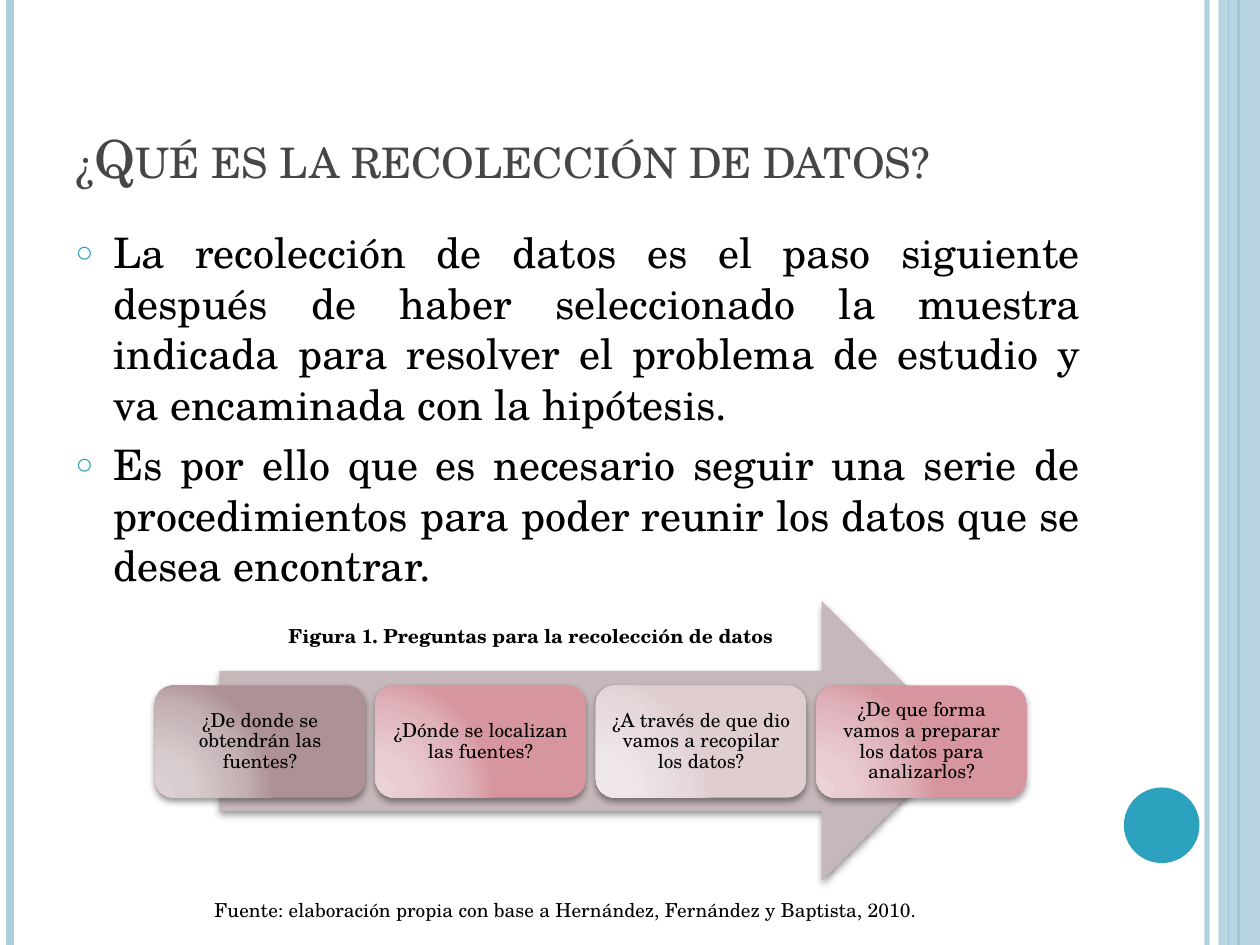
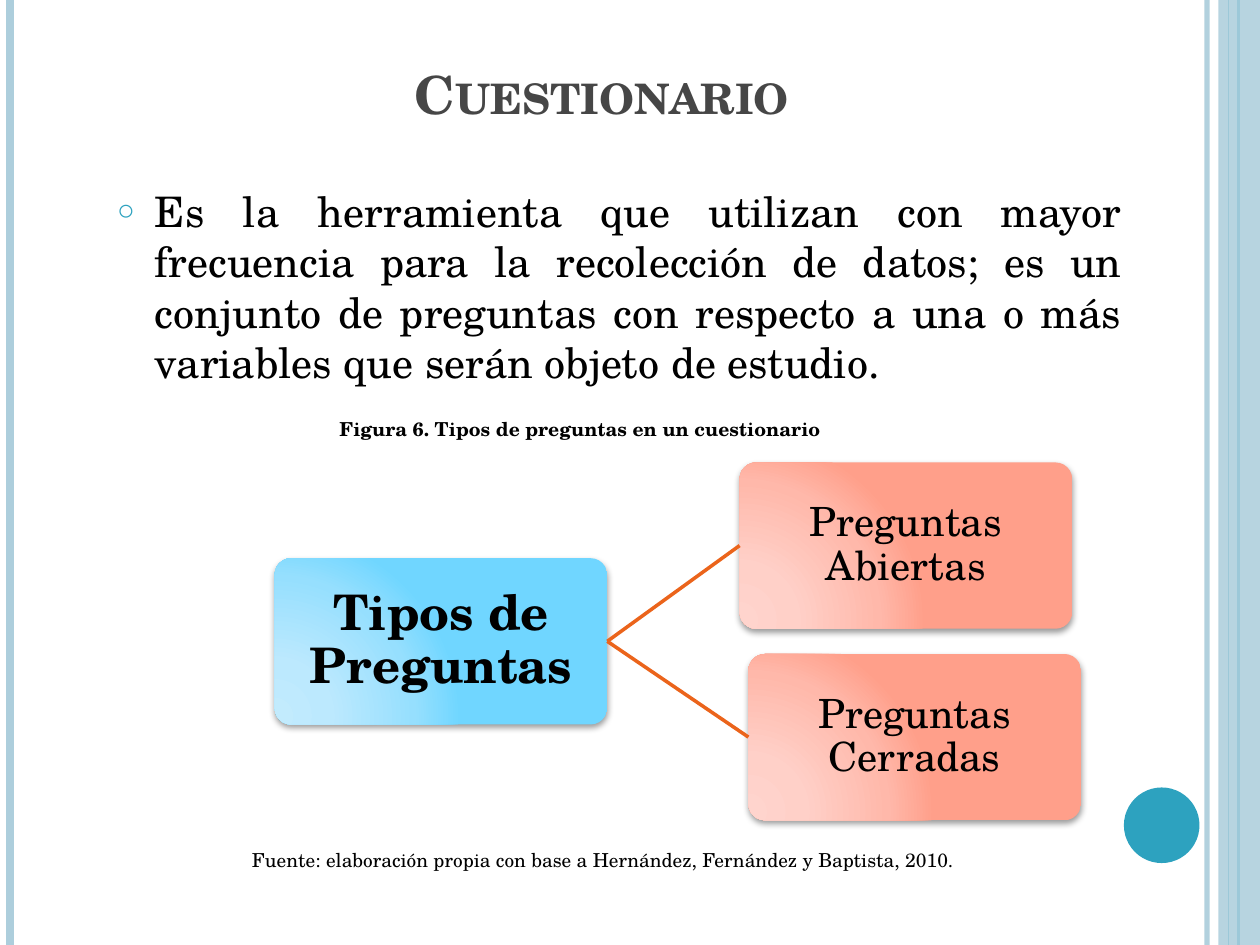
from dataclasses import dataclass

from lxml import etree
from pptx import Presentation
from pptx.dml.color import RGBColor
from pptx.enum.shapes import MSO_CONNECTOR, MSO_SHAPE
from pptx.enum.text import MSO_ANCHOR, MSO_AUTO_SIZE, PP_ALIGN
from pptx.oxml.ns import qn
from pptx.util import Pt

PX = 9144  # 100 px to the inch
WIDTH, HEIGHT = 1000, 750
FONT = "TeX Gyre Schola"
BLACK, GRAY, TEAL, PALE, ORANGE = "000000", "464646", "2DA2BF", "ADCEDC", "EB641B"
LEFT, CENTER, JUSTIFY = PP_ALIGN.LEFT, PP_ALIGN.CENTER, PP_ALIGN.JUSTIFY
TOP, MIDDLE, BOTTOM = MSO_ANCHOR.TOP, MSO_ANCHOR.MIDDLE, MSO_ANCHOR.BOTTOM
RECTANGLE, ELLIPSE = MSO_SHAPE.RECTANGLE, MSO_SHAPE.OVAL
ROUNDED, ARROW = MSO_SHAPE.ROUNDED_RECTANGLE, MSO_SHAPE.RIGHT_ARROW
STRAIGHT = MSO_CONNECTOR.STRAIGHT
LEFT_SIDE, RIGHT_SIDE = 1, 3
STOPS = (0, 30, 75, 100)
MAUVE = ("DBD1D3", "D8CDCE", "C3B0B3", "AE9195")
ROSE = ("EBD2D5", "E9CDD1", "DFB2B9", "D6959F")
BLUSH = ("F0E8E9", "EEE6E7", "E6D9DB", "DFCDD0")
SKY = ("C2EBFD", "BCE9FE", "96DFFE", "70D6FF")
CORAL = ("FFD4CD", "FFD0C8", "FFB8AA", "FF9F8A")
SOURCE = "Fuente: elaboración propia con base a Hernández, Fernández y Baptista, 2010."


@dataclass(frozen=True)
class Area:
    left: int
    top: int
    width: int
    height: int

    def emu(self) -> tuple:
        return tuple(v * PX for v in (self.left, self.top, self.width, self.height))


@dataclass(frozen=True)
class Rule:
    x: int
    color: str
    weight: float
    opacity: int = 100


@dataclass(frozen=True)
class Card:
    text: str
    area: Area
    colors: tuple
    size: int
    inset: int
    bold: bool = False
    corner: float = 0.1667


RULES = (Rule(958, PALE, 3, 93), Rule(8, PALE, 4.5), Rule(983, TEAL, 1.5), Rule(975, TEAL, 0.75))


def rgb(color: str) -> RGBColor:
    return RGBColor.from_string(color)


def add_node(parent, tag: str, **attributes):
    return etree.SubElement(parent, qn(tag), {k: str(v) for k, v in attributes.items()})


def set_opacity(shape, percent: int) -> None:
    color = shape._element.spPr.find(".//" + qn("a:srgbClr"))
    add_node(color, "a:alpha", val=percent * 1000)


def add_bullet(para) -> None:
    props = para._p.get_or_add_pPr()
    props.set("marL", str(30 * PX))
    props.set("indent", str(-30 * PX))
    add_node(add_node(props, "a:buClr"), "a:srgbClr", val=TEAL)
    add_node(props, "a:buSzPct", val=70000)
    add_node(props, "a:buChar", char="○")


def write_text(shape, *texts: str, size: int, color: str = BLACK, bold: bool = False,
               align=CENTER, anchor=MIDDLE, inset=None, line_spacing: float = 1.0,
               bullets: bool = False, small_caps: bool = False) -> None:
    """Fill the shape with one paragraph for each text."""
    frame = shape.text_frame
    frame.word_wrap = True
    frame.auto_size = MSO_AUTO_SIZE.NONE
    frame.vertical_anchor = anchor
    if inset is not None:
        frame.margin_left = frame.margin_right = inset * PX
        frame.margin_top = frame.margin_bottom = inset * PX
    for index, text in enumerate(texts):
        para = frame.add_paragraph() if index else frame.paragraphs[0]
        if bullets:
            add_bullet(para)
        para.alignment = align
        para.line_spacing = line_spacing
        para.space_before = Pt(6 if index else 0)
        span = para.add_run()
        span.text = text
        span.font.name = FONT
        span.font.size = Pt(size)
        span.font.bold = bold
        span.font.color.rgb = rgb(color)
        if small_caps:
            span._r.get_or_add_rPr().set("cap", "small")


def add_shape(page, kind, area: Area, color: str = ""):
    """Add a shape without line or shadow; it has no fill yet if color is empty."""
    shape = page.shapes.add_shape(kind, *area.emu())
    shape.line.fill.background()
    shape.shadow.inherit = False
    if color:
        shape.fill.solid()
        shape.fill.fore_color.rgb = rgb(color)
    return shape


def add_line(page, x1: int, y1: int, x2: int, y2: int, color: str, weight: float):
    line = page.shapes.add_connector(STRAIGHT, x1 * PX, y1 * PX, x2 * PX, y2 * PX)
    line.line.color.rgb = rgb(color)
    line.line.width = Pt(weight)
    add_node(line._element.spPr, "a:effectLst")
    return line


def add_shadow(shape) -> None:
    effects = shape._element.spPr.find(qn("a:effectLst"))
    shadow = add_node(effects, "a:outerShdw", blurRad=Pt(4), dist=Pt(2),
                      dir=90 * 60000, algn="ctr", rotWithShape=0)
    add_node(add_node(shadow, "a:srgbClr", val=BLACK), "a:alpha", val=40000)


def fill_radial(shape, colors: tuple) -> None:
    """Fill with a circular gradient that spreads from the lower left."""
    gradient = etree.Element(qn("a:gradFill"), rotWithShape="1")
    stops = add_node(gradient, "a:gsLst")
    for position, color in zip(STOPS, colors):
        add_node(add_node(stops, "a:gs", pos=position * 1000), "a:srgbClr", val=color)
    circle = add_node(gradient, "a:path", path="circle")
    add_node(circle, "a:fillToRect", l=5000, t=100000, r=120000, b=10000)
    shape._element.spPr.find(qn("a:prstGeom")).addnext(gradient)


def add_card(page, card: Card):
    shape = add_shape(page, ROUNDED, card.area)
    shape.adjustments[0] = card.corner
    fill_radial(shape, card.colors)
    add_shadow(shape)
    write_text(shape, card.text, size=card.size, bold=card.bold, inset=card.inset,
               line_spacing=0.9)
    return shape


def add_label(page, text: str, area: Area, **text_format) -> None:
    write_text(page.shapes.add_textbox(*area.emu()), text, size=11, **text_format)


def place(shape, area: Area) -> None:
    shape.left, shape.top, shape.width, shape.height = area.emu()


def add_page(deck, title: str, title_area: Area, body: tuple, body_area: Area,
             bold_title: bool = False):
    """Add a slide with its side bands, title and bulleted body."""
    page = deck.slides.add_slide(deck.slide_layouts[1])
    for rule in RULES:
        line = add_line(page, rule.x, 0, rule.x, HEIGHT, rule.color, rule.weight)
        if rule.opacity < 100:
            set_opacity(line, rule.opacity)
    set_opacity(add_shape(page, RECTANGLE, Area(967, 0, 33, HEIGHT), PALE), 87)
    add_shape(page, ELLIPSE, Area(892, 625, 60, 60), TEAL)

    heading, content = page.shapes.title, page.placeholders[1]
    place(heading, title_area)
    write_text(heading, title, size=30, color=GRAY, bold=bold_title, align=LEFT,
               anchor=BOTTOM, small_caps=True)
    place(content, body_area)
    write_text(content, *body, size=24, align=JUSTIFY, anchor=TOP, bullets=True)
    return page


def build_collection_page(deck) -> None:
    page = add_page(
        deck, "¿Qué es la recolección de datos?", Area(50, 30, 817, 125),
        ("La recolección de datos es el paso siguiente después de haber seleccionado la "
         "muestra indicada para resolver el problema de estudio y va encaminada con la "
         "hipótesis.",
         "Es por ello que es necesario seguir una serie de procedimientos para poder "
         "reunir los datos que se desea encontrar."),
        Area(50, 175, 817, 533))
    add_shadow(add_shape(page, ARROW, Area(174, 477, 589, 222), "C6B8BA"))
    questions = (
        ("¿De donde se obtendrán las fuentes?", MAUVE),
        ("¿Dónde se localizan las fuentes?", ROSE),
        ("¿A través de que dio vamos a recopilar los datos?", BLUSH),
        ("¿De que forma vamos a preparar los datos para analizarlos?", ROSE),
    )
    for index, (question, colors) in enumerate(questions):
        area = Area(123 + 175 * index, 544, 167, 89)
        add_card(page, Card(question, area, colors, size=11, inset=5))
    add_label(page, SOURCE, Area(83, 708, 732, 29), anchor=TOP)
    add_label(page, "Figura 1. Preguntas para la recolección de datos",
              Area(130, 493, 583, 23), bold=True)


def build_questionnaire_page(deck) -> None:
    page = add_page(
        deck, "Cuestionario", Area(319, -21, 817, 125),
        ("Es la herramienta que utilizan con mayor frecuencia para la recolección de "
         "datos; es un conjunto de preguntas con respecto a una o más variables que "
         "serán objeto de estudio.",),
        Area(83, 142, 817, 533), bold_title=True)
    root = add_card(page, Card("Tipos de Preguntas", Area(218, 443, 264, 132), SKY,
                               size=28, inset=2, bold=True, corner=0.1))
    branches = (("Preguntas Abiertas", 587, 367), ("Preguntas Cerradas", 594, 519))
    for text, left, top in branches:
        branch = add_card(page, Card(text, Area(left, top, 264, 132), CORAL,
                                     size=23, inset=2, corner=0.1))
        line = add_line(page, 482, 509, left, top + 66, ORANGE, 2)
        line.begin_connect(root, RIGHT_SIDE)
        line.end_connect(branch, LEFT_SIDE)
    add_label(page, SOURCE, Area(190, 668, 756, 29), align=LEFT, anchor=TOP)
    add_label(page, "Figura 6. Tipos de preguntas en un cuestionario",
              Area(169, 329, 583, 23), bold=True)


def main() -> None:
    deck = Presentation()
    deck.slide_width, deck.slide_height = WIDTH * PX, HEIGHT * PX
    build_collection_page(deck)
    build_questionnaire_page(deck)
    deck.save("out.pptx")


if __name__ == "__main__":
    main()
